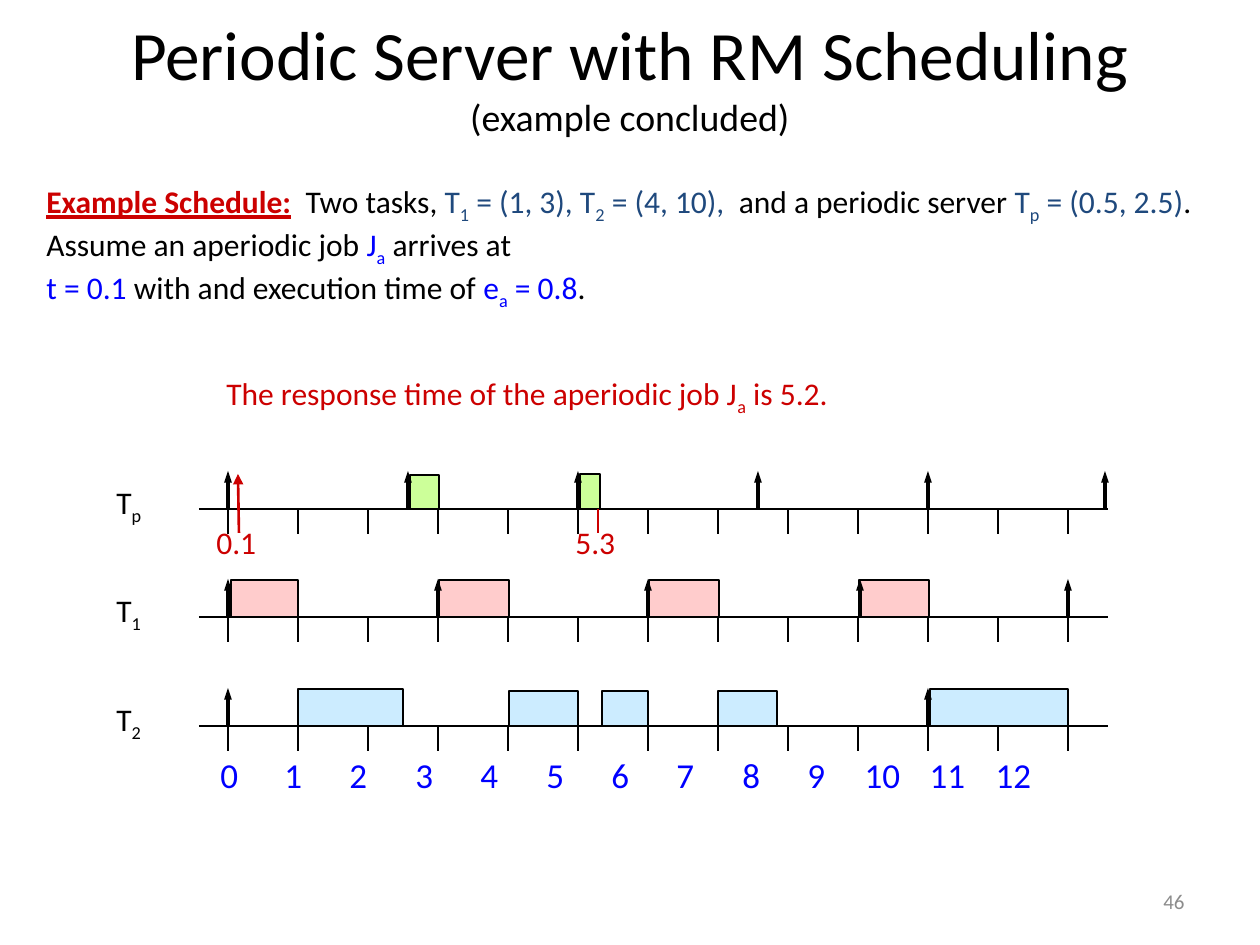
from lxml.etree import SubElement
from pptx import Presentation
from pptx.dml.color import RGBColor
from pptx.enum.shapes import MSO_CONNECTOR, MSO_SHAPE
from pptx.enum.text import MSO_ANCHOR, PP_ALIGN
from pptx.oxml.ns import qn
from pptx.util import Emu, Pt

SCALE = 914400 / 126
FONT = "Calibri"
BLACK = RGBColor(0, 0, 0)
RED = RGBColor(0xCC, 0, 0)
BLUE = RGBColor(0, 0, 0xFF)
NAVY = RGBColor(0x1F, 0x49, 0x7D)
GRAY = RGBColor(0x8C, 0x8C, 0x8C)
GREEN_FILL = RGBColor(0xCC, 0xFF, 0x99)
PINK_FILL = RGBColor(0xFF, 0xCC, 0xCC)
SKY_FILL = RGBColor(0xCC, 0xEC, 0xFF)
UNIT = 70
LAST_TIME = 12


def px(*lengths):
    return [Emu(round(length * SCALE)) for length in lengths]


def add_text(slide, left, top, width, height, anchor=MSO_ANCHOR.TOP):
    frame = slide.shapes.add_textbox(*px(left, top, width, height)).text_frame
    frame.word_wrap = True
    frame.vertical_anchor = anchor
    return frame


def add_run(paragraph, text, color=BLACK, size=18, subscript=False):
    run = paragraph.add_run()
    run.text = text
    run.font.name = FONT
    run.font.size = Pt(size)
    run.font.color.rgb = color
    if subscript:
        run.font._element.set("baseline", "-25000")
    return run


def add_runs(paragraph, pieces):
    for text, color, subscript in pieces:
        add_run(paragraph, text, color, subscript=subscript)


def add_line(slide, x1, y1, x2, y2, color=BLACK, weight=1, head_width=None):
    line = slide.shapes.add_connector(MSO_CONNECTOR.STRAIGHT, *px(x1, y1, x2, y2))
    line.line.color.rgb = color
    line.line.width = Pt(weight)
    if head_width:
        SubElement(line.line._get_or_add_ln(), qn("a:tailEnd"), type="triangle", w=head_width)
    SubElement(line._element.spPr, qn("a:effectLst"))


def add_job(slide, left, top, width, height, fill):
    job = slide.shapes.add_shape(MSO_SHAPE.RECTANGLE, *px(left, top, width, height))
    job.shadow.inherit = False
    job.fill.solid()
    job.fill.fore_color.rgb = fill
    job.line.color.rgb = BLACK
    job.line.width = Pt(1)


def draw_heading(slide, left, top, width, height):
    heading = add_text(slide, left, top, width, height, MSO_ANCHOR.MIDDLE).paragraphs[0]
    heading.alignment = PP_ALIGN.CENTER
    add_run(heading, "Periodic Server with RM Scheduling", size=39.6)
    heading.add_line_break()
    add_run(heading, "(example concluded)", size=21.6)


def draw_example(slide, left, top, width, height):
    frame = add_text(slide, left, top, width, height)
    tasks = frame.paragraphs[0]
    lead = add_run(tasks, "Example Schedule:", RED)
    lead.font.bold = True
    lead.font.underline = True
    add_runs(tasks, [
        ("  Two tasks, ", BLACK, False),
        ("T", NAVY, False), ("1", NAVY, True),
        (" = (1, 3), T", NAVY, False), ("2", NAVY, True),
        (" = (4, 10),  ", NAVY, False),
        ("and a periodic server ", BLACK, False),
        ("T", NAVY, False), ("p", NAVY, True), (" = (0.5, 2.5)", NAVY, False),
        (".  Assume an aperiodic job ", BLACK, False),
        ("J", BLUE, False), ("a", BLUE, True), (" arrives at", BLACK, False),
    ])
    add_runs(frame.add_paragraph(), [
        ("t = 0.1", BLUE, False), (" with and execution time of ", BLACK, False),
        ("e", BLUE, False), ("a", BLUE, True), (" = 0.8", BLUE, False),
        (".", BLACK, False),
    ])


def draw_response(slide, left, top, width, height):
    response = add_text(slide, left, top, width, height).paragraphs[0]
    add_runs(response, [
        ("The response time of the aperiodic job J", RED, False),
        ("a", RED, True), (" is 5.2.", RED, False),
    ])


def draw_timeline(slide, origin, axis, task, fill, jobs, releases):
    for start, width, height in jobs:
        add_job(slide, origin + start, axis - height, width, height, fill)
    add_line(slide, origin - 29, axis, origin + 880, axis)
    for time in range(LAST_TIME + 1):
        tick = origin + time * UNIT
        add_line(slide, tick, axis, tick, axis + 25)
    label = add_text(slide, origin - 124, axis - 32, 66, 63).paragraphs[0]
    add_runs(label, [("T", BLACK, False), (task, BLACK, True)])
    for release in releases:
        x = origin + release
        add_line(slide, x, axis, x, axis - 38, weight=2.25, head_width="sm")


def draw_time_scale(slide, left, top, width, height):
    scale = add_text(slide, left, top, width, height).paragraphs[0]
    stops = SubElement(scale._p.get_or_add_pPr(), qn("a:tabLst"))
    add_run(scale, "0", BLUE, 20)
    for time in range(1, LAST_TIME + 1):
        position, = px(8 + 785 * time // LAST_TIME)
        SubElement(stops, qn("a:tab"), pos=str(int(position)), algn="ctr")
        add_run(scale, f"\t{time}", BLUE, 20)


def draw_aperiodic_marks(slide, origin, axis):
    add_line(slide, origin + 11, axis + 24, origin + 10, axis - 35, RED, 1.5, "med")
    add_line(slide, origin + 370, axis, origin + 370, axis + 24, RED)
    for text, offset in [("0.1", -24), ("5.3", 335)]:
        mark = add_text(slide, origin + offset, axis + 8, 76, 50, MSO_ANCHOR.MIDDLE)
        add_run(mark.paragraphs[0], text, RED)


def draw_page_number(slide, left, top, width, height):
    number = add_text(slide, left, top, width, height, MSO_ANCHOR.MIDDLE).paragraphs[0]
    number.alignment = PP_ALIGN.RIGHT
    add_run(number, "46", GRAY, 12)


def main():
    deck = Presentation()
    deck.slide_width, deck.slide_height = px(1260, 945)
    slide = deck.slides.add_slide(deck.slide_layouts[6])
    origin, server_axis = 228, 509
    timelines = [
        ("p", GREEN_FILL, [(182, 29, 34), (352, 20, 35)],
         [0, 180, 350, 530, 700, 877]),
        ("1", PINK_FILL, [(3, 67, 37), (211, 70, 37), (421, 70, 37), (631, 70, 37)],
         [0, 210, 420, 632, 840]),
        ("2", SKY_FILL,
         [(70, 105, 37), (281, 69, 35), (374, 46, 35), (490, 59, 35), (702, 138, 37)],
         [0, 700]),
    ]
    draw_heading(slide, 0, 12, 1260, 126)
    draw_example(slide, 34, 176, 1213, 127)
    draw_response(slide, 214, 368, 822, 63)
    for row, (task, fill, jobs, releases) in enumerate(timelines):
        axis = server_axis + row * 217 // 2
        draw_timeline(slide, origin, axis, task, fill, jobs, releases)
    draw_time_scale(slide, 208, 747, 892, 54)
    draw_aperiodic_marks(slide, origin, server_axis)
    draw_page_number(slide, 903, 876, 294, 50)
    deck.save("out.pptx")


if __name__ == "__main__":
    main()
